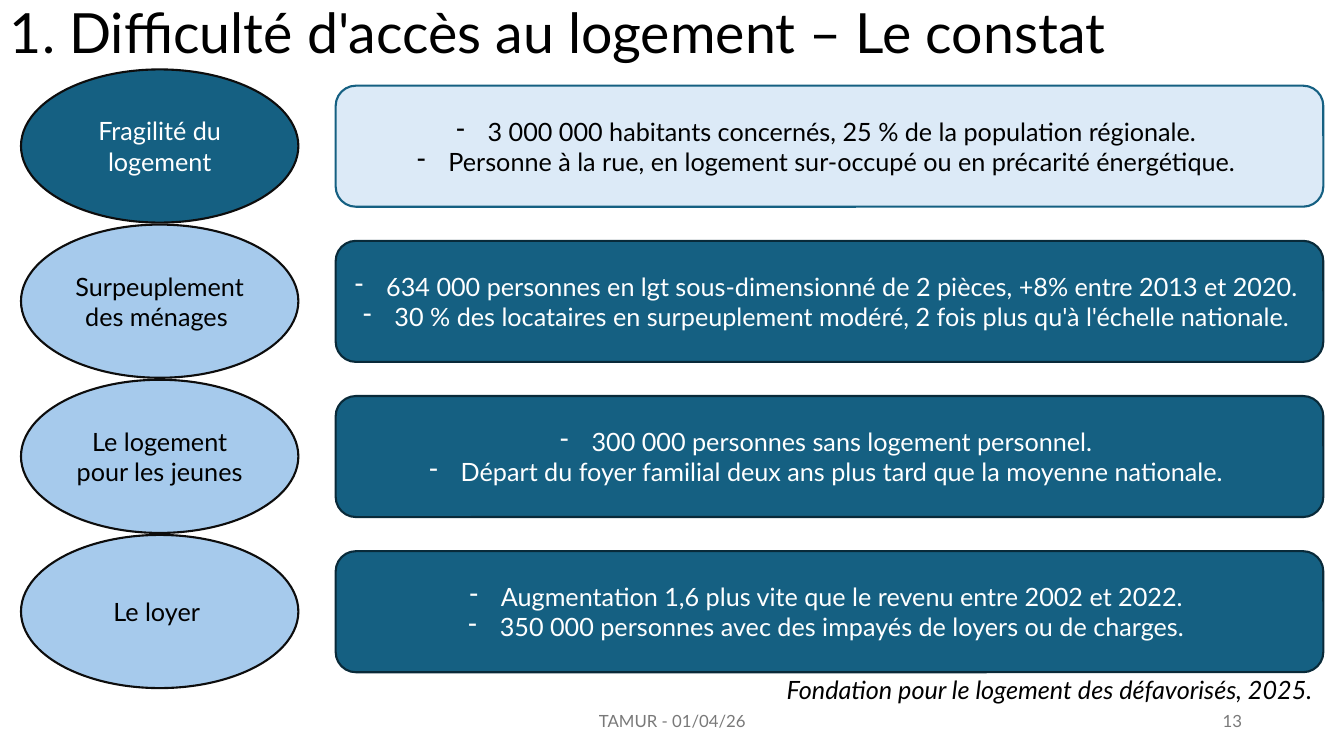
"""Build the slide on the difficulty of access to housing."""
import lxml.etree
import pptx
import pptx.dml.color
import pptx.enum.shapes
import pptx.enum.text
import pptx.oxml.ns
import pptx.util

Cm = pptx.util.Cm
ALIGN = pptx.enum.text.PP_ALIGN
PRESET = pptx.enum.shapes.MSO_SHAPE

COLOURS = {
    "black": "000000", "white": "FFFFFF", "grey": "797979", "outline": "0D0D0D",
    "teal": "156082", "dark teal": "092A39", "sky": "A6CAEC", "pale": "DCEAF7",
}
BODY = {"name": "Lato", "size": pptx.util.Pt(18)}
TITLE = {"name": "Lato", "size": pptx.util.Pt(39.6)}
FOOTER = {"name": "Lato", "size": pptx.util.Pt(12)}
SOURCE = {**BODY, "italic": True}

ROW_PITCH = 3.91
HIGHLIGHTED = {"theme": ("teal", "outline", "white"), "facts": ("pale", "teal", "black")}
REGULAR = {"theme": ("sky", "outline", "black"), "facts": ("teal", "dark teal", "white")}
FINDINGS = [
    ("Fragilité du logement", HIGHLIGHTED, [
        "3 000 000 habitants concernés, 25 % de la population régionale. ",
        "Personne à la rue, en logement sur-occupé ou en précarité énergétique. "]),
    ("Surpeuplement des ménages ", REGULAR, [
        "634 000 personnes en lgt sous-dimensionné de 2 pièces, +8% entre 2013 et 2020. ",
        "30 % des locataires en surpeuplement modéré, 2 fois plus qu'à l'échelle nationale. "]),
    ("Le logement pour les jeunes", REGULAR, [
        "300 000 personnes sans logement personnel. ",
        "Départ du foyer familial deux ans plus tard que la moyenne nationale. "]),
    ("Le loyer ", REGULAR, [
        "Augmentation 1,6 plus vite que le revenu entre 2002 et 2022. ",
        "350 000 personnes avec des impayés de loyers ou de charges. "]),
]


def colour(name):
    """Return the named colour as an RGB value."""
    return pptx.dml.color.RGBColor.from_string(COLOURS[name])


def add_dash(paragraph):
    """Give a paragraph a hanging dash bullet."""
    properties = paragraph._p.get_or_add_pPr()
    properties.set("marL", str(Cm(0.79)))
    properties.set("indent", str(-Cm(0.79)))
    bullet = lxml.etree.SubElement(properties, pptx.oxml.ns.qn("a:buChar"))
    bullet.set("char", "-")


def write(frame, lines, font_format, ink, align, dashed=False):
    """Fill a text frame with formatted, vertically centred paragraphs."""
    frame.word_wrap = True
    frame.vertical_anchor = pptx.enum.text.MSO_ANCHOR.MIDDLE
    for position, line in enumerate(lines):
        paragraph = frame.add_paragraph() if position else frame.paragraphs[0]
        paragraph.alignment = align
        if dashed:
            add_dash(paragraph)
        run = paragraph.add_run()
        run.text = line
        for attribute, value in font_format.items():
            setattr(run.font, attribute, value)
        run.font.color.rgb = colour(ink)


def add_label(slide, box, text, font_format, ink, align):
    """Add a one-line text box and return its paragraph."""
    label = slide.shapes.add_textbox(*map(Cm, box))
    write(label.text_frame, [text], font_format, ink, align)
    return label.text_frame.paragraphs[0]


def add_panel(slide, preset, box, palette, lines, dashed=False):
    """Add a filled, outlined shape with centred text."""
    fill, outline, ink = palette
    panel = slide.shapes.add_shape(preset, *map(Cm, box))
    panel.shadow.inherit = False
    panel.fill.solid()
    panel.fill.fore_color.rgb = colour(fill)
    panel.line.color.rgb = colour(outline)
    panel.line.width = pptx.util.Pt(1.5)
    write(panel.text_frame, lines, BODY, ink, ALIGN.CENTER, dashed)


def main():
    """Assemble and save the slide."""
    deck = pptx.Presentation()
    deck.slide_width, deck.slide_height = Cm(33.87), Cm(19.05)
    slide = deck.slides.add_slide(deck.slide_layouts[6])

    heading = add_label(slide, (0, 0.03, 33.83, 1.73),
                        "1. Difficulté d'accès au logement – Le constat",
                        TITLE, "black", ALIGN.LEFT)
    heading.line_spacing = 0.9
    add_label(slide, (23.93, 17.65, 7.62, 1.02), "13", FOOTER, "grey", ALIGN.RIGHT)
    add_label(slide, (11.23, 17.65, 11.43, 1.02), "TAMUR - 01/04/26",
              FOOTER, "grey", ALIGN.CENTER)

    for row, (theme, palettes, facts) in enumerate(FINDINGS):
        drop = row * ROW_PITCH
        add_panel(slide, PRESET.OVAL, (0.53, 1.75 + drop, 6.99, 3.86),
                  palettes["theme"], [theme])
        add_panel(slide, PRESET.ROUNDED_RECTANGLE, (8.46, 2.16 + drop, 24.89, 3.05),
                  palettes["facts"], facts, dashed=True)

    add_label(slide, (18.8, 16.87, 14.53, 1.02),
              "Fondation pour le logement des défavorisés, 2025.",
              SOURCE, "black", ALIGN.RIGHT)
    deck.save("out.pptx")


if __name__ == "__main__":
    main()
